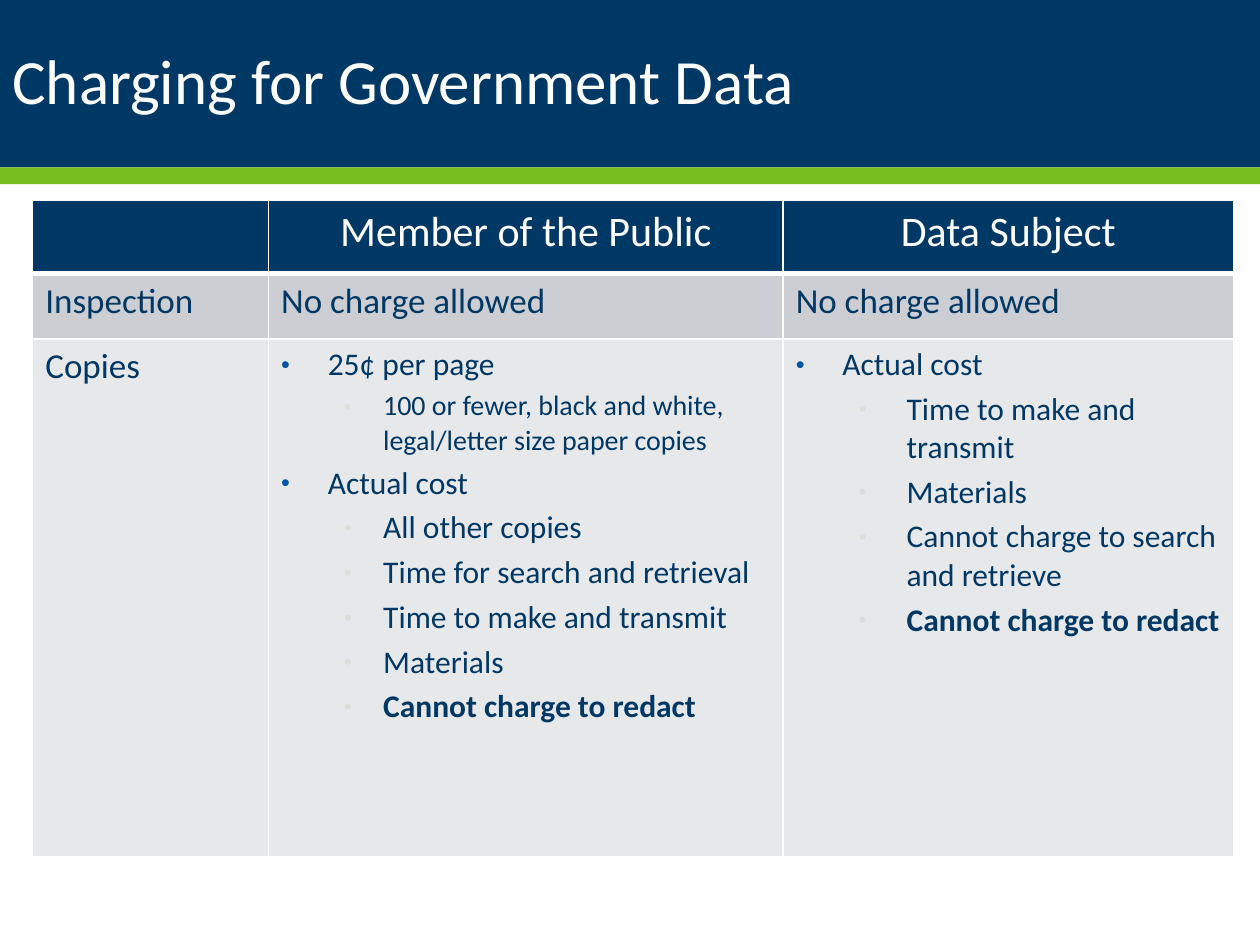
"""Build the slide on charging for government data."""
from dataclasses import dataclass

from lxml import etree
from pptx import Presentation
from pptx.dml.color import RGBColor
from pptx.enum.shapes import MSO_SHAPE
from pptx.enum.text import MSO_ANCHOR, PP_ALIGN
from pptx.oxml.ns import qn
from pptx.util import Inches, Pt

RECT = MSO_SHAPE.RECTANGLE
MIDDLE = MSO_ANCHOR.MIDDLE
LEFT, CENTER = PP_ALIGN.LEFT, PP_ALIGN.CENTER
WIDE, HIGH = Inches(10), Inches(7.5)


@dataclass(frozen=True)
class Theme:
    """Hold the colours, font and type sizes."""
    navy: str = "003865"
    green: str = "78BE21"
    white: str = "FFFFFF"
    band: str = "CCCED3"
    pale: str = "E7E8EA"
    dot: str = "0054A6"
    faint: str = "DDDDDA"
    font: str = "Calibri"
    title: int = 36
    head: int = 24
    label: int = 20
    body: int = 18
    small: int = 16


LOOK = Theme()
TITLE = "Charging for Government Data"
COLS = (1.87, 4.08, 3.57)
ROWS = (0.58, 0.52, 4.11)
HEADS = ("", "Member of the Public", "Data Subject")
CHECKS = ("Inspection", "No charge allowed", "No charge allowed")
PUBLIC = (
    (0, "25¢ per page", {}),
    (1, "100 or fewer, black and white, legal/letter size paper copies",
     {"size": LOOK.small}),
    (0, "Actual cost", {}),
    (1, "All other copies", {}),
    (1, "Time for search and retrieval", {}),
    (1, "Time to make and transmit", {}),
    (1, "Materials", {}),
    (1, "Cannot charge to redact", {"bold": True}),
)
SUBJECT = (
    (0, "Actual cost", {}),
    (1, "Time to make and transmit", {}),
    (1, "Materials", {}),
    (1, "Cannot charge to search and retrieve", {}),
    (1, "Cannot charge to redact", {"bold": True}),
)


def write(par, text, size, color, bold=False, align=LEFT):
    """Put one styled run in a paragraph."""
    par.alignment = align
    run = par.add_run()
    run.text = text
    style = {"name": LOOK.font, "size": Pt(size), "bold": bold}
    for key, value in style.items():
        setattr(run.font, key, value)
    run.font.color.rgb = RGBColor.from_string(color)


def bullet(par, level, hang):
    """Give a paragraph a coloured bullet and a hanging indent."""
    left = 0.5 + hang if level else 0.37
    step = hang if level else left
    props = par._p.get_or_add_pPr()
    props.set("marL", str(Inches(left)))
    props.set("indent", str(-Inches(step)))
    tint = etree.SubElement(props, qn("a:buClr"))
    color = LOOK.faint if level else LOOK.dot
    etree.SubElement(tint, qn("a:srgbClr"), val=color)
    share = "70000" if level else "80000"
    etree.SubElement(props, qn("a:buSzPct"), val=share)
    etree.SubElement(props, qn("a:buFont"), typeface="Arial")
    etree.SubElement(props, qn("a:buChar"), char="•")


def list_points(cell, points, hang):
    """Fill a cell with a two-level list."""
    frame = cell.text_frame
    for rank, (level, text, extra) in enumerate(points):
        par = frame.add_paragraph() if rank else frame.paragraphs[0]
        style = {"size": LOOK.body, "color": LOOK.navy, **extra}
        par.level = level
        par.space_before = Pt(0.2 * style["size"] if rank else 0)
        bullet(par, level, hang)
        write(par, text, **style)


def paint(cell, color, base):
    """Fill a cell and rule its four sides in white."""
    cell.fill.solid()
    cell.fill.fore_color.rgb = RGBColor.from_string(color)
    props = cell._tc.get_or_add_tcPr()
    sides = {"L": 1, "R": 1, "T": 1, "B": base}
    for rank, (side, width) in enumerate(sides.items()):
        line = etree.Element(qn(f"a:ln{side}"), w=str(Pt(width)))
        fill = etree.SubElement(line, qn("a:solidFill"))
        etree.SubElement(fill, qn("a:srgbClr"), val=LOOK.white)
        props.insert(rank, line)


def banner(slide, left, top, width, height):
    """Draw the title band with its green rule."""
    deep = height * 10 // 11
    bands = ((top, deep, LOOK.navy), (top + deep, height - deep, LOOK.green))
    for start, tall, color in bands:
        bar = slide.shapes.add_shape(RECT, left, start, width, tall)
        bar.shadow.inherit = False
        bar.fill.solid()
        bar.fill.fore_color.rgb = RGBColor.from_string(color)
        bar.line.fill.background()
    frame = slide.shapes.add_textbox(left, top, width, deep).text_frame
    frame.word_wrap = True
    frame.vertical_anchor = MIDDLE
    frame.paragraphs[0].line_spacing = 0.9
    write(frame.paragraphs[0], TITLE, LOOK.title, LOOK.white)


def charges(slide, left, top, width, height):
    """Place the table of charges in its box."""
    table = slide.shapes.add_table(
        len(ROWS), len(COLS), left, top, width, height).table
    table.horz_banding = False
    for col, share in zip(table.columns, COLS):
        col.width = int(width * share / sum(COLS))
    for row, share in zip(table.rows, ROWS):
        row.height = int(height * share / sum(ROWS))
    head = {"size": LOOK.head, "color": LOOK.white, "align": CENTER}
    label = {"size": LOOK.label, "color": LOOK.navy}
    rows = ((HEADS, head, LOOK.navy, 3), (CHECKS, label, LOOK.band, 1),
            (("Copies", "", ""), label, LOOK.pale, 1))
    for row, (texts, style, color, base) in enumerate(rows):
        for col, text in enumerate(texts):
            cell = table.cell(row, col)
            paint(cell, color, base)
            if text:
                write(cell.text_frame.paragraphs[0], text, **style)
    list_points(table.cell(2, 1), PUBLIC, 0.31)
    list_points(table.cell(2, 2), SUBJECT, 0.38)


def main():
    """Build and save the slide."""
    deck = Presentation()
    deck.slide_width, deck.slide_height = WIDE, HIGH
    slide = deck.slides.add_slide(deck.slide_layouts[6])
    banner(slide, 0, 0, WIDE, int(HIGH * 0.195))
    charges(slide, int(WIDE * 0.026), int(HIGH * 0.212),
            int(WIDE * 0.953), int(HIGH * 0.695))
    deck.save("out.pptx")


if __name__ == "__main__":
    main()
